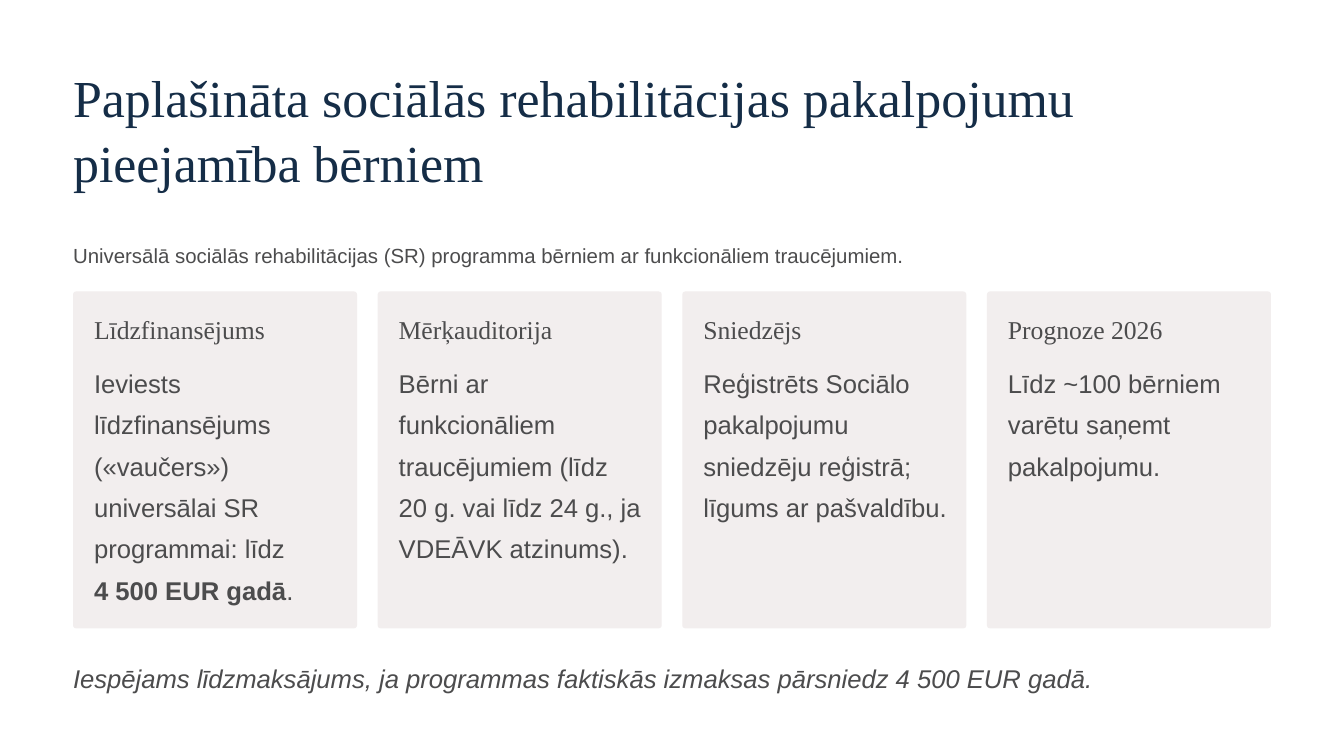
import pptx
import pptx.dml.color
import pptx.enum.shapes
import pptx.enum.text
import pptx.util
from pptx.util import Inches

TITLE = "Paplašināta sociālās rehabilitācijas pakalpojumu pieejamība bērniem"
INTRO = "Universālā sociālās rehabilitācijas (SR) programma bērniem ar funkcionāliem traucējumiem."
# Heading, then the runs of the body as (text, bold); \v is a line break
CARDS = [
    ("Līdzfinansējums", [
        ("Ieviests līdzfinansējums («vaučers») universālai SR programmai: līdz\v", False),
        ("4 500 EUR gadā", True),
        (".", False),
    ]),
    ("Mērķauditorija", [
        ("Bērni ar funkcionāliem traucējumiem (līdz 20 g. vai līdz 24 g., ja VDEĀVK atzinums).", False),
    ]),
    ("Sniedzējs", [
        ("Reģistrēts Sociālo pakalpojumu sniedzēju reģistrā; līgums ar pašvaldību.", False),
    ]),
    ("Prognoze 2026", [("Līdz ~100 bērniem varētu saņemt pakalpojumu.", False)]),
]
NOTE = "Iespējams līdzmaksājums, ja programmas faktiskās izmaksas pārsniedz 4 500 EUR gadā."

COLORS = {"background": "FFFFFF", "title": "152D47", "text": "4C4C4D", "card": "F2EEEE"}
SERIF, SANS = "Times New Roman", "Arial"

MARGIN, CONTENT_WIDTH = 0.87, 14.26
CARD_TOP, CARD_WIDTH, CARD_HEIGHT = 3.47, 3.38, 4.01
CARD_GAP = (CONTENT_WIDTH - len(CARDS) * CARD_WIDTH) / (len(CARDS) - 1)
PADDING = 0.25
CARD_TEXT_WIDTH = 2.9


def color(name):
    return pptx.dml.color.RGBColor.from_string(COLORS[name])


def write(shape, runs, font, size, line_height, color_name="text", italic=False):
    """Fill a text shape with one left-aligned paragraph, without insets."""
    frame = shape.text_frame
    frame.margin_left = frame.margin_top = frame.margin_right = frame.margin_bottom = 0
    frame.word_wrap = True
    frame.auto_size = pptx.enum.text.MSO_AUTO_SIZE.NONE
    frame.vertical_anchor = pptx.enum.text.MSO_ANCHOR.TOP
    paragraph = frame.paragraphs[0]
    paragraph.alignment = pptx.enum.text.PP_ALIGN.LEFT
    paragraph.line_spacing = pptx.util.Pt(line_height)
    paragraph.font.name = font
    paragraph.font.size = pptx.util.Pt(size)
    paragraph.font.italic = italic
    paragraph.font.color.rgb = color(color_name)
    for text, bold in runs:
        if text.endswith("\v"):
            paragraph.add_run().text = text[:-1]
            paragraph.add_line_break()
        else:
            run = paragraph.add_run()
            run.text = text
            if bold:
                run.font.bold = True


def add_text(slide, left, top, width, height, runs, *style, **options):
    box = slide.shapes.add_textbox(Inches(left), Inches(top), Inches(width), Inches(height))
    write(box, runs, *style, **options)


def add_card(slide, left, heading, body):
    card = slide.shapes.add_shape(
        pptx.enum.shapes.MSO_SHAPE.ROUNDED_RECTANGLE,
        Inches(left), Inches(CARD_TOP), Inches(CARD_WIDTH), Inches(CARD_HEIGHT))
    card.adjustments[0] = 0.01
    card.shadow.inherit = False
    card.fill.solid()
    card.fill.fore_color.rgb = color("card")
    card.line.fill.background()
    text_left = left + PADDING
    add_text(slide, text_left, CARD_TOP + PADDING, CARD_TEXT_WIDTH, 0.39,
             [(heading, False)], SERIF, 22, 27.5)
    add_text(slide, text_left, 4.25, CARD_TEXT_WIDTH, 2.98, body, SANS, 22, 35.5)


def main():
    presentation = pptx.Presentation()
    presentation.slide_width, presentation.slide_height = Inches(16), Inches(9)
    slide = presentation.slides.add_slide(presentation.slide_layouts.get_by_name("Title Only"))
    slide.background.fill.solid()
    slide.background.fill.fore_color.rgb = color("background")

    title = slide.shapes.title
    title.left, title.top = Inches(MARGIN), Inches(0.75)
    title.width, title.height = Inches(CONTENT_WIDTH), Inches(1.55)
    write(title, [(TITLE, False)], SERIF, 44.5, 55.5, color_name="title")

    add_text(slide, MARGIN, 2.79, CONTENT_WIDTH, 0.4, [(INTRO, False)], SANS, 17.5, 28.5)
    for index, (heading, body) in enumerate(CARDS):
        add_card(slide, MARGIN + index * (CARD_WIDTH + CARD_GAP), heading, body)
    add_text(slide, MARGIN, 7.76, CONTENT_WIDTH, 0.5, [(NOTE, False)], SANS, 22, 35.5, italic=True)

    presentation.save("out.pptx")


if __name__ == "__main__":
    main()
